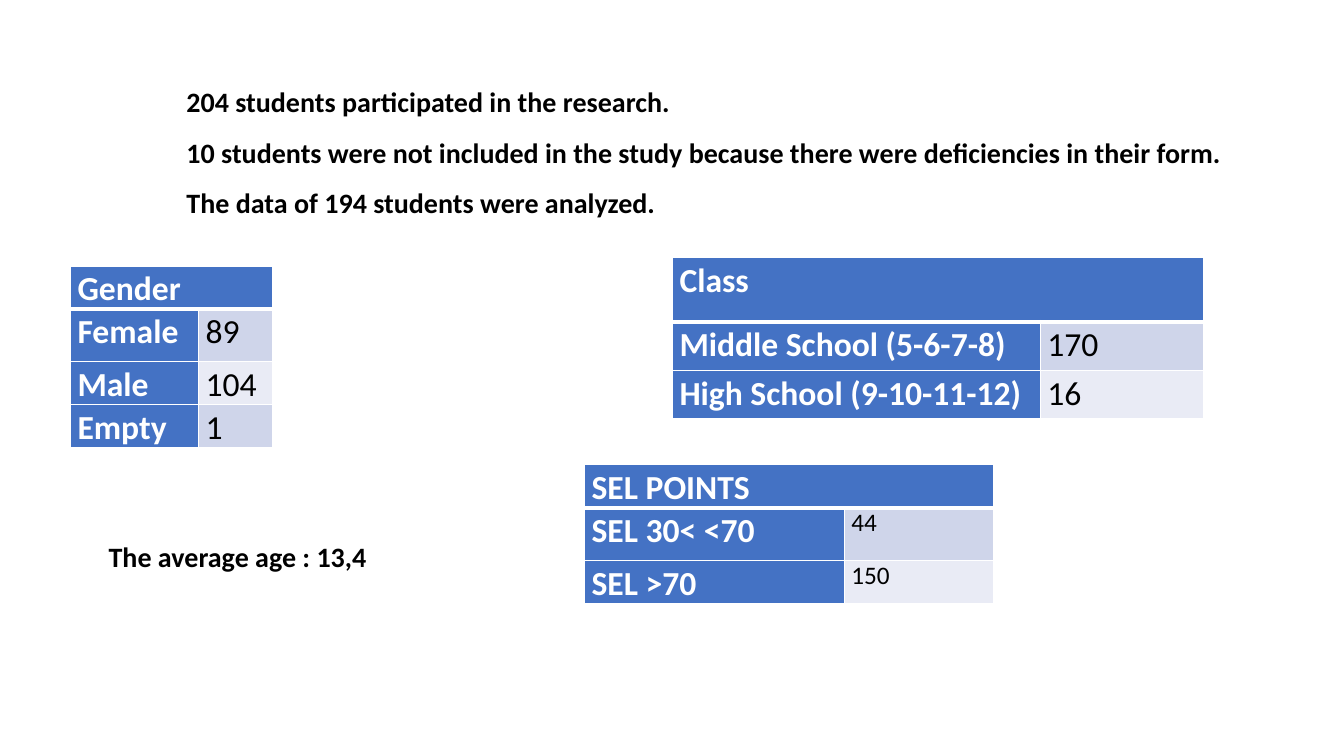
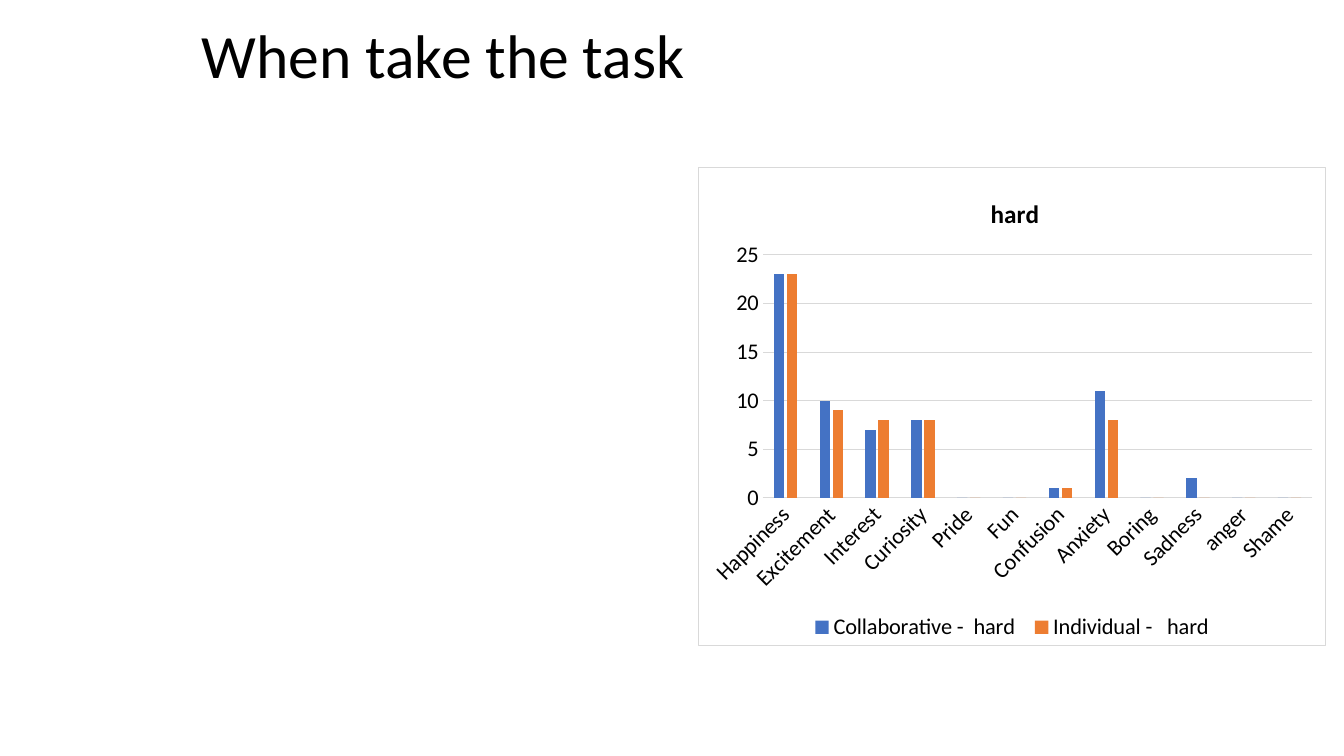
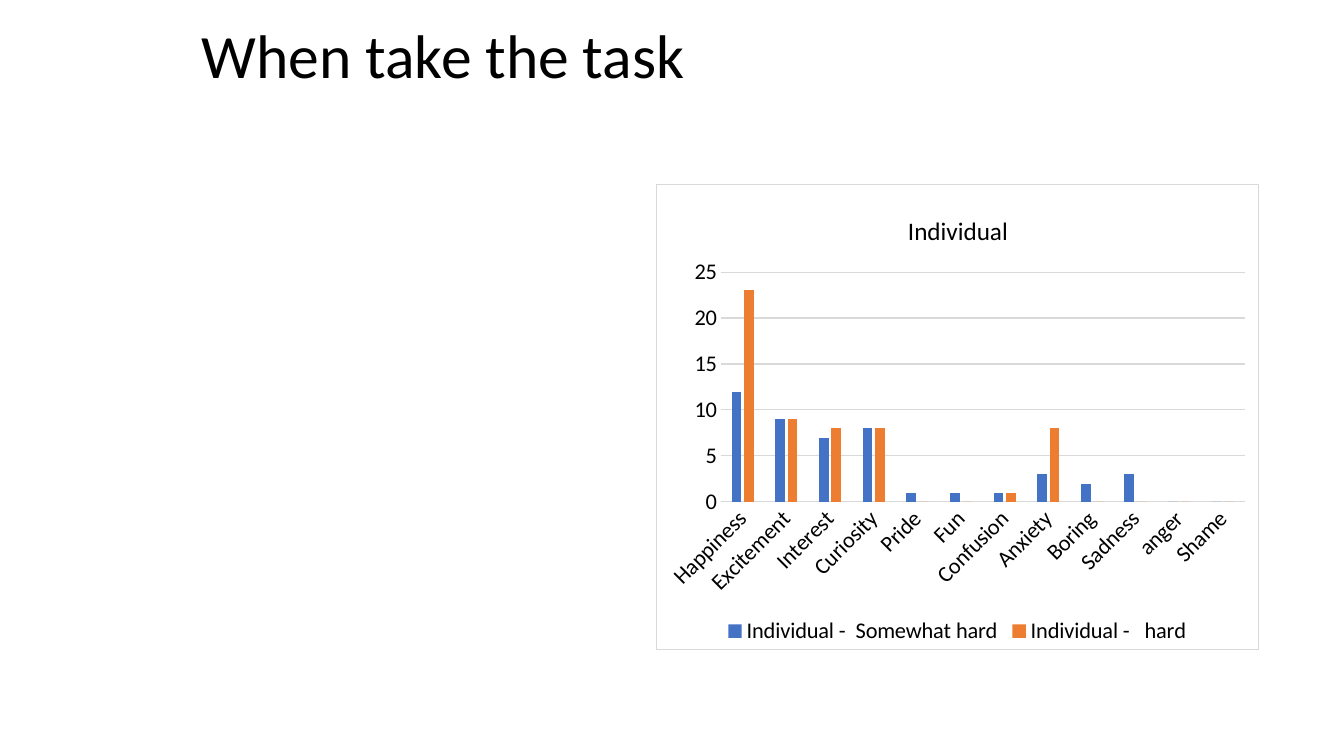
"""Build the three survey result slides: participants, then two emotion charts."""
from lxml.etree import SubElement
from pptx import Presentation
from pptx.chart.data import CategoryChartData
from pptx.dml.color import RGBColor as RGB
from pptx.enum.chart import XL_CHART_TYPE as CHART, XL_LEGEND_POSITION as LEGEND, XL_TICK_MARK as TICK
from pptx.enum.text import MSO_ANCHOR as ANCHOR, MSO_AUTO_SIZE as AUTO, PP_ALIGN as ALIGN
from pptx.oxml import parse_xml
from pptx.oxml.ns import nsdecls, qn
from pptx.util import Pt


class Theme:
    font = "Calibri"
    black, white = RGB(0, 0, 0), RGB(255, 255, 255)
    blue, orange = RGB(0x44, 0x72, 0xC4), RGB(0xED, 0x7D, 0x31)
    bands = RGB(0xCF, 0xD5, 0xEA), RGB(0xE9, 0xEB, 0xF5)
    line = RGB(0xD9, 0xD9, 0xD9)
    title, cell, body, small, chart = 44, 24, 20, 18, 16
    leading, after = 1.07, 8


def set_font(font, size, color=Theme.black, bold=False):
    font.name, font.size, font.bold = Theme.font, Pt(size), bold
    font.color.rgb = color


def set_layout(parent, index, **fractions):
    for old in parent.findall(qn("c:layout")):
        parent.remove(old)
    layout = parse_xml(f"<c:layout {nsdecls('c')}><c:manualLayout/></c:layout>")
    for tag, val in fractions.items():
        SubElement(layout[0], qn(f"c:{tag}")).set("val", str(val))
    parent.insert(index, layout)


prs = Presentation()
prs.slide_width, prs.slide_height = Pt(960), Pt(540)

summary = ("204 students participated in the research.\v"
           "10 students were not included in the study because there were deficiencies in their form.\v"
           "The data of 194 students were analyzed.")
task = "When take the task"
titles = [
    (summary, (126, 42, 820, 121), Theme.body, True, 1.5),
    (task, (136.8, 12, 820, 60), Theme.title, False, 0.9),
    (task, (136.8, 12, 820, 60), Theme.title, False, 0.9),
]
for text, box, size, bold, spacing in titles:
    s = prs.slides.add_slide(prs.slide_layouts[5])
    sp = s.shapes.title
    sp.left, sp.top, sp.width, sp.height = map(Pt, box)
    tf = sp.text_frame
    tf.text = text
    tf.word_wrap, tf.auto_size, tf.vertical_anchor = True, AUTO.NONE, ANCHOR.MIDDLE
    p = tf.paragraphs[0]
    p.alignment, p.line_spacing = ALIGN.LEFT, spacing
    for r in p.runs:
        set_font(r.font, size, bold=bold)

s = prs.slides[0]
tf = s.shapes.add_textbox(Pt(70.5), Pt(380), Pt(480), Pt(32)).text_frame
tf.word_wrap = True
tf.text = "The average age : 13,4"
p = tf.paragraphs[0]
p.line_spacing, p.space_after = Theme.leading, Pt(Theme.after)
set_font(p.runs[0].font, Theme.body, bold=True)

tables = [
    ((50.4, 190), (91.5, 52.5), (30, 37.5, 30, 30), Theme.cell,
     [("Gender", ""), ("Female", "89"), ("Male", "104"), ("Empty", "1")]),
    ((480.4, 183.8), (262.8, 116.6), (46, 34.8, 34.8), Theme.cell,
     [("Class", ""), ("Middle School (5-6-7-8)", "170"), ("High School (9-10-11-12)", "16")]),
    ((417.6, 332), (185.6, 106.4), (30, 37.5, 30), Theme.small,
     [("SEL POINTS", ""), ("SEL 30< <70", "44"), ("SEL >70", "150")]),
]
for (left, top), widths, heights, value_size, rows in tables:
    table = s.shapes.add_table(len(rows), 2, Pt(left), Pt(top), Pt(sum(widths)), Pt(sum(heights))).table
    for column, width in zip(table.columns, widths):
        column.width = Pt(width)
    for i, row in enumerate(rows):
        table.rows[i].height = Pt(heights[i])
        for j, text in enumerate(row):
            cell = table.cell(i, j)
            cell.margin_left = cell.margin_right = Pt(5)
            cell.margin_top = cell.margin_bottom = 0
            props = cell._tc.get_or_add_tcPr()
            for side in "LRTB":
                thick = (i, side) in ((0, "B"), (1, "T"))
                props.append(parse_xml(
                    f'<a:ln{side} {nsdecls("a")} w="{Pt(3 if thick else 1)}"><a:solidFill>'
                    f'<a:srgbClr val="{Theme.white}"/></a:solidFill></a:ln{side}>'))
            is_value = i > 0 and j == 1
            cell.fill.solid()
            cell.fill.fore_color.rgb = Theme.bands[(i - 1) % 2] if is_value else Theme.blue
            if not text:
                continue
            cell.text_frame.text = text
            p = cell.text_frame.paragraphs[0]
            size = value_size if is_value else Theme.cell
            if size == Theme.cell:
                p.line_spacing, p.space_after = Theme.leading, Pt(Theme.after)
            set_font(p.runs[0].font, size, Theme.black if is_value else Theme.white, not is_value)
    table.cell(0, 0).merge(table.cell(0, 1))

emotions = ["Happiness", "Excitement", "Interest", "Curiosity", "Pride", "Fun",
            "Confusion", "Anxiety", "Boring", "Sadness", "anger", "Shame"]
individual_hard = ("Individual -   hard", (23, 9, 8, 8, 0, 0, 1, 8, 0, 0, 0, 0))
charts = [
    ("hard", 37, True, (498.4, 119.4, 449, 342),
     ("Collaborative -  hard ", (23, 10, 7, 8, 0, 0, 1, 11, 0, 2, 0, 0))),
    ("Individual", 77, False, (468.6, 131.6, 430.4, 332.6),
     ("Individual -  Somewhat hard", (12, 9, 7, 8, 1, 1, 1, 3, 2, 3, 0, 0))),
]
inset_left, inset_top, inset_right, inset_bottom = 46, 62.5, 9.5, 105.5
title_top = 17.5
for s, (title, title_width, bold, box, first_series) in zip(list(prs.slides)[1:], charts):
    data = CategoryChartData()
    data.categories = emotions
    for name, values in (first_series, individual_hard):
        data.add_series(name, values)
    chart = s.shapes.add_chart(CHART.COLUMN_CLUSTERED, *map(Pt, box), data).chart
    set_font(chart.font, Theme.chart)
    chart.has_title = True
    tf = chart.chart_title.text_frame
    tf.text = title
    set_font(tf.paragraphs[0].runs[0].font, Theme.small, bold=bold)

    plot = chart.plots[0]
    plot.gap_width, plot.overlap, plot.vary_by_categories = 219, -27, False
    for series, color in zip(plot.series, (Theme.blue, Theme.orange)):
        series.format.fill.solid()
        series.format.fill.fore_color.rgb = color
    for axis in (chart.category_axis, chart.value_axis):
        axis.major_tick_mark = axis.minor_tick_mark = TICK.NONE
        set_font(axis.tick_labels.font, Theme.chart)
    labels = chart.category_axis._element.find(qn("c:txPr"))
    labels.find(qn("a:bodyPr")).set("rot", "-2700000")
    axis = chart.value_axis
    axis.minimum_scale, axis.maximum_scale, axis.major_unit = 0, 25, 5
    axis.format.line.fill.background()
    for line in (chart.category_axis.format.line, axis.major_gridlines.format.line):
        line.color.rgb, line.width = Theme.line, Pt(0.75)
    chart.has_legend = True
    chart.legend.position, chart.legend.include_in_layout = LEGEND.BOTTOM, False
    set_font(chart.legend.font, Theme.chart)

    width, height = box[2:]
    frame = chart._chartSpace.find(qn("c:chart"))
    set_layout(frame.find(qn("c:title")), 1, xMode="edge", yMode="edge",
               x=(width - title_width) / 2 / width, y=title_top / height)
    set_layout(frame.find(qn("c:plotArea")), 0, layoutTarget="inner", xMode="edge", yMode="edge",
               x=inset_left / width, y=inset_top / height,
               w=(width - inset_left - inset_right) / width,
               h=(height - inset_top - inset_bottom) / height)
    frame.addnext(parse_xml(
        f'<c:spPr {nsdecls("c", "a")}><a:solidFill><a:srgbClr val="{Theme.white}"/></a:solidFill>'
        f'<a:ln w="{Pt(0.75)}"><a:solidFill><a:srgbClr val="{Theme.line}"/></a:solidFill></a:ln></c:spPr>'))

prs.save("out.pptx")
